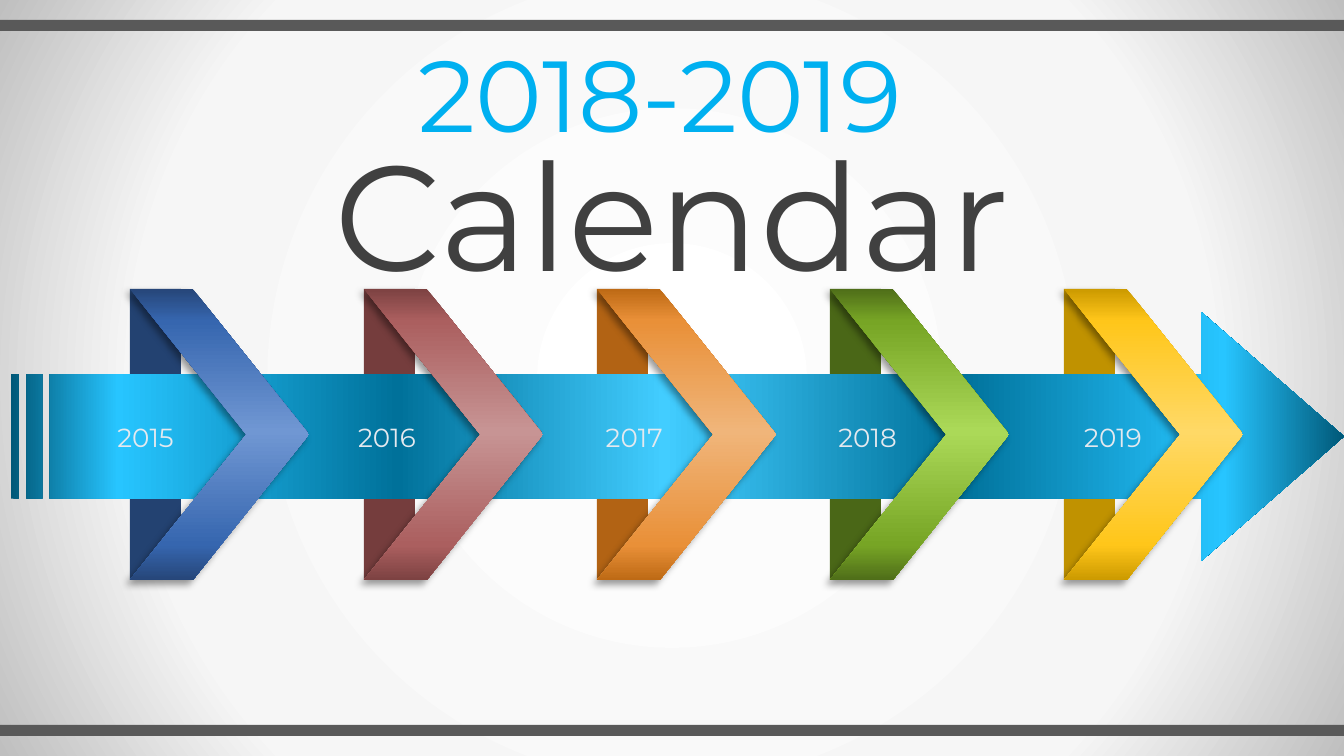
from dataclasses import dataclass

from pptx import Presentation
from pptx import util as u
from pptx.dml.color import RGBColor
from pptx.enum import shapes, text
from pptx.oxml import ns
from lxml import etree

PX = 914400 / 134.4  # EMU per pixel
WIDTH, HEIGHT = 1344, 756

Stops = list[tuple[int, str]]


@dataclass(frozen=True)
class Theme:
    font: str = "Montserrat"
    title_size: int = 80
    years_size: int = 54
    label_size: int = 14
    title: str = "404040"
    years: str = "00B0F0"
    label: str = "E4E9EF"
    bar: str = "595959"
    shadow: str = "000000"
    background: tuple = ((0, "FFFFFF"), (70, "F6F6F6"), (100, "BFBFBF"))
    arrow: tuple = ((0, "005878"), (8, "27C5FF"), (29, "00719A"), (49, "42CDFF"),
                    (71, "00719A"), (91, "27C5FF"), (100, "005878"))


@dataclass(frozen=True)
class Box:
    x: int
    y: int
    w: int
    h: int

    def emu(self) -> list[int]:
        return [round(v * PX) for v in (self.x, self.y, self.w, self.h)]


@dataclass(frozen=True)
class Ribbon:
    year: str
    label_x: int
    back: str
    edge: str
    body: str
    middle: str

    def stops(self) -> Stops:
        return [(0, self.edge), (11, self.body), (49, self.middle),
                (88, self.body), (100, self.edge)]


THEME = Theme()
RIBBONS = [
    Ribbon("2015", 63, "234271", "264679", "3666AF", "7097D3"),
    Ribbon("2016", 305, "753D3D", "7D4242", "AB5F5F", "C79494"),
    Ribbon("2017", 552, "B26314", "BE6A15", "E99038", "F0B57A"),
    Ribbon("2018", 786, "4A6717", "4F6E19", "77A525", "ABD958"),
    Ribbon("2019", 1031, "C09200", "CC9A00", "FFC61A", "FFD966"),
]
RIBBON_X, RIBBON_STEP, RIBBON_Y, RIBBON_H = 130, 233.5, 289, 291


def add_color(parent, tag: str, color: str, **attrs: str):
    """Append an element that holds one RGB colour; return the colour."""
    el = etree.SubElement(parent, ns.qn(tag), attrs)
    return etree.SubElement(el, ns.qn("a:srgbClr"), val=color)


def set_gradient(fill, owner, stops: Stops):
    """Give the fill of the owner element these gradient stops."""
    fill.gradient()
    grad = owner.find(".//" + ns.qn("a:gradFill"))
    gs_lst = grad.find(ns.qn("a:gsLst"))
    for gs in list(gs_lst):
        gs_lst.remove(gs)
    for pos, color in stops:
        add_color(gs_lst, "a:gs", color, pos=str(pos * 1000))
    return grad


def add_shape(parent, kind, box: Box, color: str = "", stops: Stops = (),
              angle: int = 0, adj: tuple = ()):
    sp = parent.add_shape(kind, *box.emu())
    for i, value in enumerate(adj):
        sp.adjustments[i] = value
    if stops:
        set_gradient(sp.fill, sp._element, stops)
        sp.fill.gradient_angle = angle
    else:
        sp.fill.solid()
        sp.fill.fore_color.rgb = RGBColor.from_string(color)
    sp.line.fill.background()
    sp.shadow.inherit = False
    return sp


def add_shadow(sp) -> None:
    effects = sp._element.spPr.find(ns.qn("a:effectLst"))
    color = add_color(effects, "a:outerShdw", THEME.shadow, blurRad=str(u.Pt(4)),
                      dist=str(u.Pt(3)), dir=str(135 * 60000), rotWithShape="0")
    etree.SubElement(color, ns.qn("a:alpha"), val="40000")


def add_text(parent, words: str, box: Box, size: int, color: str, align) -> None:
    tf = parent.add_textbox(*box.emu()).text_frame
    tf.word_wrap = True
    tf.vertical_anchor = text.MSO_ANCHOR.MIDDLE
    p = tf.paragraphs[0]
    p.text = words
    p.alignment = align
    p.font.name = THEME.font
    p.font.size = u.Pt(size)
    p.font.color.rgb = RGBColor.from_string(color)


def draw_background(s) -> None:
    grad = set_gradient(s.background.fill, s._element, THEME.background)
    grad.remove(grad.find(ns.qn("a:lin")))
    path = etree.SubElement(grad, ns.qn("a:path"), {"path": "circle"})
    etree.SubElement(path, ns.qn("a:fillToRect"),
                     dict.fromkeys("ltrb", "50000"))


def draw_timeline(s) -> None:
    group = s.shapes.add_group_shape().shapes
    shape = shapes.MSO_SHAPE
    lefts = [round(RIBBON_X + RIBBON_STEP * i) for i in range(len(RIBBONS))]

    # Ribbon backs, behind the arrow
    for x, ribbon in zip(lefts, RIBBONS):
        add_shape(group, shape.RECTANGLE, Box(x, RIBBON_Y, 51, RIBBON_H), ribbon.back)

    # Long arrow
    add_shape(group, shape.STRIPED_RIGHT_ARROW, Box(11, 312, 1333, 249),
              stops=THEME.arrow, adj=(0.5, 0.573))

    # Ribbon fronts
    for x, ribbon in zip(lefts, RIBBONS):
        sp = add_shape(group, shape.CHEVRON, Box(x, RIBBON_Y, 179, RIBBON_H),
                       stops=ribbon.stops(), angle=270, adj=(0.65,))
        add_shadow(sp)

    # Years
    for ribbon in RIBBONS:
        add_text(group, ribbon.year, Box(ribbon.label_x, 400, 124, 74),
                 THEME.label_size, THEME.label, text.PP_ALIGN.RIGHT)


def main() -> None:
    prs = Presentation()
    prs.slide_width, prs.slide_height = round(WIDTH * PX), round(HEIGHT * PX)
    s = prs.slides.add_slide(prs.slide_layouts[6])
    draw_background(s)
    draw_timeline(s)

    # Top and bottom bars
    for y in (20, 725):
        add_shape(s.shapes, shapes.MSO_SHAPE.RECTANGLE, Box(0, y, WIDTH, 11), THEME.bar)

    # Title
    center = text.PP_ALIGN.CENTER
    add_text(s.shapes, "Calendar", Box(22, 155, 1300, 113),
             THEME.title_size, THEME.title, center)
    add_text(s.shapes, "2018-2019", Box(257, 36, 806, 113),
             THEME.years_size, THEME.years, center)

    prs.save("out.pptx")


if __name__ == "__main__":
    main()
